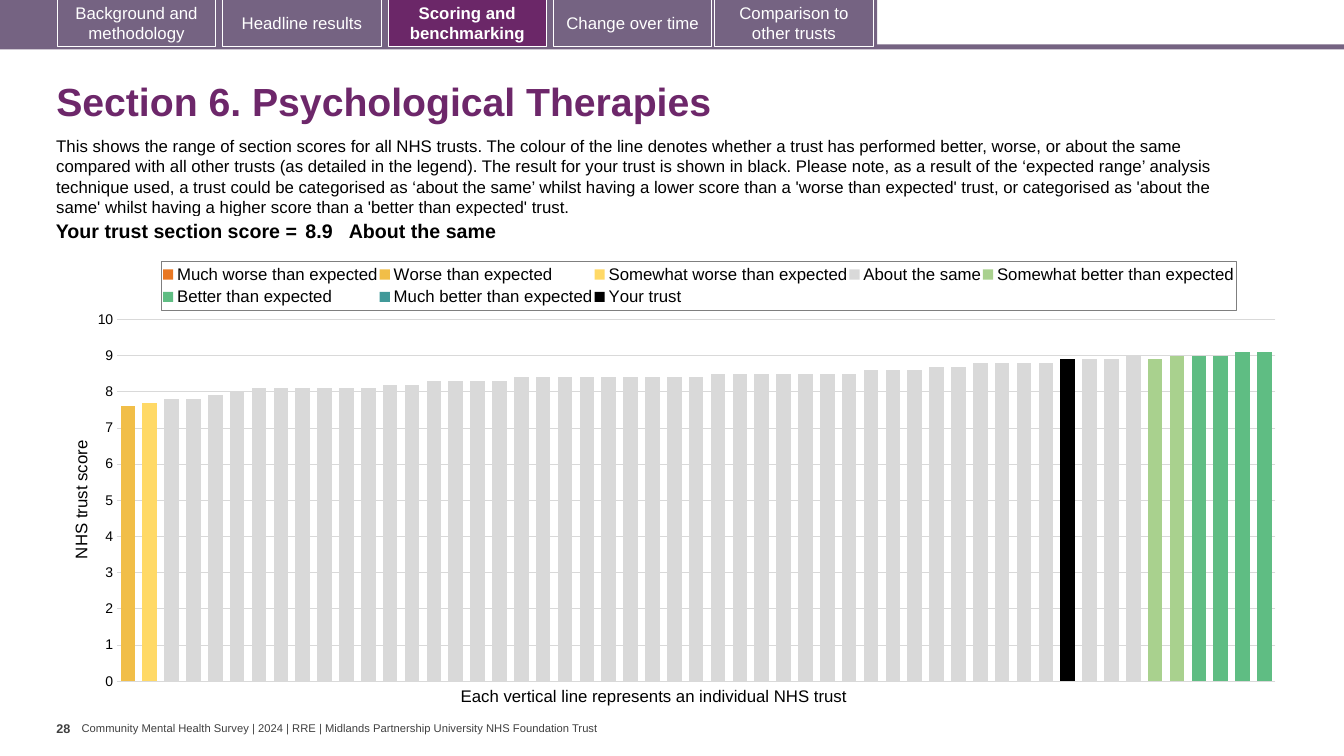
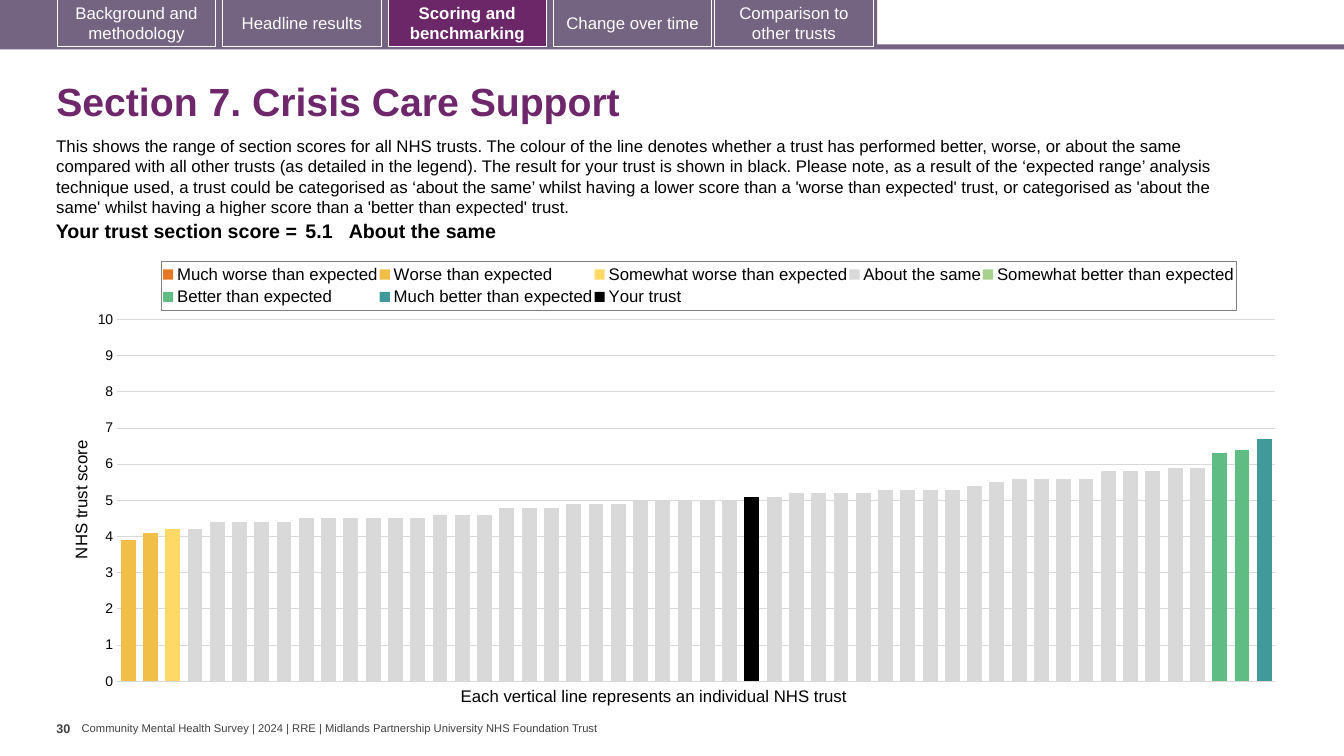
from collections import namedtuple
from copy import deepcopy
from dataclasses import dataclass

from lxml import etree
from pptx import Presentation
from pptx import util as u
from pptx.chart.data import CategoryChartData
from pptx.dml.color import RGBColor
from pptx.enum import chart as charts, shapes, text
from pptx.oxml import parse_xml
from pptx.oxml.ns import nsdecls, qn

PX = 9144
CHART_BOX = (67, 247, 1215, 444)


@dataclass(frozen=True)
class Theme:
    """Colours, font and type sizes shared by all slides."""
    font: str = "Arial"
    band: str = "756382"
    active_tab: str = "6B2768"
    title: str = "6D276A"
    ink: str = "000000"
    muted: str = "404040"
    white: str = "FFFFFF"
    grid: str = "D9D9D9"
    legend_line: str = "7F7F7F"
    title_size: int = 28
    score_size: int = 14
    body_size: int = 12
    axis_size: int = 10
    page_size: int = 9
    footer_size: int = 8


THEME = Theme()
BAND_COLOURS = {
    "Much worse than expected": "E87722",
    "Worse than expected": "F1BE48",
    "Somewhat worse than expected": "FFD966",
    "About the same": "D9D9D9",
    "Somewhat better than expected": "A9D18E",
    "Better than expected": "5FBD83",
    "Much better than expected": "419999",
}
TABS = {
    "Background and methodology": 57,
    "Headline results": 221,
    "Scoring and benchmarking": 385,
    "Change over time": 549,
    "Comparison to other trusts": 709,
}
ACTIVE_TAB = "Scoring and benchmarking"
FOOTER = ("Community Mental Health Survey | 2024 | RRE | "
          "Midlands Partnership University NHS Foundation Trust")
INTRO = (
    "This shows the range of section scores for all NHS trusts. The colour of the line denotes "
    "whether a trust has performed better, worse, or about the same compared with all other trusts "
    "(as detailed in the legend). The result for your trust is shown in black. Please note, as a "
    "result of the ‘expected range’ analysis technique used, a trust could be categorised as ‘about "
    "the same’ whilst having a lower score than a 'worse than expected' trust, or categorised as "
    "'about the same' whilst having a higher score than a 'better than expected' trust."
)
Section = namedtuple("Section", "page title own_rank own_score verdict bands")
SECTIONS = [
    Section("28", "Section 6. Psychological Therapies", 44, 8.9, "About the same", {
        "Worse than expected": [7.6],
        "Somewhat worse than expected": [7.7],
        "About the same": [
            7.8, 7.8, 7.9, 8, 8.1, 8.1, 8.1, 8.1, 8.1, 8.1, 8.2, 8.2, 8.3, 8.3, 8.3, 8.3,
            8.4, 8.4, 8.4, 8.4, 8.4, 8.4, 8.4, 8.4, 8.4, 8.5, 8.5, 8.5, 8.5, 8.5, 8.5, 8.5,
            8.6, 8.6, 8.6, 8.7, 8.7, 8.8, 8.8, 8.8, 8.8, 8.9, 8.9, 8.9, 9],
        "Somewhat better than expected": [8.9, 9],
        "Better than expected": [9, 9, 9.1, 9.1],
    }),
    Section("30", "Section 7. Crisis Care Support", 29, 5.1, "About the same", {
        "Worse than expected": [3.9, 4.1],
        "Somewhat worse than expected": [4.2],
        "About the same": [
            4.2, 4.4, 4.4, 4.4, 4.4, 4.5, 4.5, 4.5, 4.5, 4.5, 4.5, 4.6, 4.6, 4.6, 4.8, 4.8,
            4.8, 4.9, 4.9, 4.9, 5, 5, 5, 5, 5, 5.1, 5.1, 5.2, 5.2, 5.2, 5.2, 5.3, 5.3, 5.3,
            5.3, 5.4, 5.5, 5.6, 5.6, 5.6, 5.6, 5.8, 5.8, 5.8, 5.9, 5.9],
        "Better than expected": [6.3, 6.4],
        "Much better than expected": [6.7],
    }),
]


def px(*lengths):
    """Turn px lengths into EMU."""
    return [u.Emu(length * PX) for length in lengths]


def style_font(font, size, colour, bold=False):
    """Apply the theme font with a size, colour and weight."""
    font.name, font.size, font.bold = THEME.font, u.Pt(size), bold
    font.color.rgb = RGBColor.from_string(colour)


def set_text(frame, words, size, colour, bold=False, align=None):
    """Write one paragraph into a frame and format its runs."""
    frame.text = words
    para = frame.paragraphs[0]
    para.alignment = align
    for span in para.runs:
        style_font(span.font, size, colour, bold)
    return para


def set_margins(holder, horizontal, vertical):
    """Set the inner margins of a text frame or table cell."""
    holder.margin_left, holder.margin_right = px(horizontal, horizontal)
    holder.margin_top, holder.margin_bottom = px(vertical, vertical)


def add_text(page, box, words, size, colour, bold=False, margins=(10, 5),
             wrap=True, anchor=text.MSO_ANCHOR.TOP):
    """Add a text box holding one paragraph."""
    frame = page.shapes.add_textbox(*px(*box)).text_frame
    frame.word_wrap, frame.vertical_anchor = wrap, anchor
    set_margins(frame, *margins)
    return set_text(frame, words, size, colour, bold)


def add_block(page, box, fill):
    """Add a flat rectangle without an outline."""
    block = page.shapes.add_shape(shapes.MSO_SHAPE.RECTANGLE, *px(*box))
    block.shadow.inherit = False
    block.fill.solid()
    block.fill.fore_color.rgb = RGBColor.from_string(fill)
    block.line.fill.background()
    return block


def add_navigation(page):
    """Add the top band with its outlined tabs."""
    add_block(page, (0, 44, 1333, 5), THEME.band)
    add_block(page, (0, 0, 870, 47), THEME.band)
    for label, left in TABS.items():
        active = label == ACTIVE_TAB
        tab = add_block(page, (left, -1, 157, 47), THEME.active_tab if active else THEME.band)
        tab.line.color.rgb = RGBColor.from_string(THEME.white)
        tab.line.width = u.Pt(0.75)
        tab.text_frame.word_wrap = True
        tab.text_frame.vertical_anchor = text.MSO_ANCHOR.MIDDLE
        set_text(tab.text_frame, label, THEME.body_size, THEME.white, active,
                 text.PP_ALIGN.CENTER)


def add_footer(page, number):
    """Add the page number and the survey line."""
    add_text(page, (56, 710, 25, 40), number, THEME.page_size, THEME.muted, True, (0, 5), False)
    add_text(page, (81, 716, 518, 13), FOOTER, THEME.footer_size, THEME.muted,
             margins=(0, 0), wrap=False, anchor=text.MSO_ANCHOR.MIDDLE)


def add_score_table(page, section):
    """Add the one-row table with the trust's score and verdict."""
    table = page.shapes.add_table(1, 3, *px(36, 215, 1169, 31)).table
    table.first_row = table.horz_banding = False
    columns = [
        (263, "Your trust section score =", 4, text.PP_ALIGN.RIGHT),
        (47, str(section.own_score), 4, text.PP_ALIGN.LEFT),
        (859, section.verdict, 0, text.PP_ALIGN.LEFT),
    ]
    for index, (width, words, margin, align) in enumerate(columns):
        table.columns[index].width = px(width)[0]
        cell = table.cell(0, index)
        cell.fill.background()
        set_margins(cell, margin, 4)
        set_text(cell.text_frame, words, THEME.score_size, THEME.ink, True, align)


def build_chart_data(section):
    """Place each band's scores at their ranks, with gaps elsewhere."""
    count = sum(len(scores) for scores in section.bands.values())
    data = CategoryChartData()
    data.categories = [str(rank) for rank in range(1, count + 1)]
    start = 0
    for name in BAND_COLOURS:
        scores = section.bands.get(name, [])
        data.add_series(name, [None] * start + scores + [None] * (count - start - len(scores)))
        start += len(scores)
    before = section.own_rank - 1
    data.add_series("Your trust", [None] * before + [section.own_score]
                    + [None] * (count - before - 1))
    return data


def place_in_chart(element, before, inner=False, **lengths):
    """Give a chart part a manual layout from px lengths within the chart."""
    for stale in element.findall(qn("c:layout")):
        element.remove(stale)
    layout = parse_xml(f"<c:layout {nsdecls('c')}><c:manualLayout/></c:layout>")
    settings = {"layoutTarget": "inner"} if inner else {}
    settings.update(xMode="edge", yMode="edge")
    for key, length in lengths.items():
        settings[key] = length / CHART_BOX[2 if key in "xw" else 3]
    for tag, value in settings.items():
        etree.SubElement(layout[0], qn(f"c:{tag}")).set("val", str(value))
    element.find(qn(before)).addprevious(layout)


def style_legend(chart):
    """Show the boxed legend above the plot."""
    chart.has_legend = True
    legend = chart.legend
    legend.position = charts.XL_LEGEND_POSITION.TOP
    legend.include_in_layout = False
    style_font(legend.font, THEME.body_size, THEME.ink)
    place_in_chart(legend._element, "c:overlay", x=93, y=12, w=1066, h=49)
    legend._element.find(qn("c:overlay")).addnext(parse_xml(
        f'<c:spPr {nsdecls("c", "a")}><a:ln w="9525"><a:solidFill>'
        f'<a:srgbClr val="{THEME.legend_line}"/></a:solidFill></a:ln></c:spPr>'))


def style_axes(chart):
    """Hide the category axis and set up the score axis."""
    chart.category_axis.visible = False
    axis = chart.value_axis
    axis.minimum_scale, axis.maximum_scale, axis.major_unit = 0, 10, 1
    axis.major_tick_mark = charts.XL_TICK_MARK.NONE
    axis.format.line.fill.background()
    style_font(axis.tick_labels.font, THEME.axis_size, THEME.ink)
    grid = axis.major_gridlines.format.line
    grid.color.rgb = RGBColor.from_string(THEME.grid)
    grid.width = u.Pt(0.75)
    frame = axis.axis_title.text_frame
    set_text(frame, "NHS trust score", THEME.body_size, THEME.ink)
    frame._txBody.bodyPr.set("rot", "-5400000")
    place_in_chart(axis.axis_title._element, "c:overlay", x=0, y=187)


def move_own_trust_to_second_axis(area):
    """Plot the last series on a second, unlabelled score axis."""
    bars, category, value = (area.find(qn(f"c:{tag}")) for tag in ("barChart", "catAx", "valAx"))
    own_bars, own_category, own_value = map(deepcopy, (bars, category, value))
    bars.remove(bars.findall(qn("c:ser"))[-1])
    for series in own_bars.findall(qn("c:ser"))[:-1]:
        own_bars.remove(series)
    for axis_id, number in zip(own_bars.findall(qn("c:axId")), ("501", "502")):
        axis_id.set("val", number)
    for axis, number, crossed in ((own_category, "501", "502"), (own_value, "502", "501")):
        axis.find(qn("c:axId")).set("val", number)
        axis.find(qn("c:crossAx")).set("val", crossed)
    for tag in ("c:majorGridlines", "c:title"):
        own_value.remove(own_value.find(qn(tag)))
    for tag, setting in (("axPos", "r"), ("tickLblPos", "none"), ("crosses", "max")):
        own_value.find(qn(f"c:{tag}")).set("val", setting)
    bars.addnext(own_bars)
    value.addnext(own_value)
    own_value.addnext(own_category)


def add_score_chart(page, section):
    """Add the ranked column chart coloured by band."""
    chart = page.shapes.add_chart(charts.XL_CHART_TYPE.COLUMN_CLUSTERED, *px(*CHART_BOX),
                                  build_chart_data(section)).chart
    chart.has_title = False
    style_font(chart.font, THEME.axis_size, THEME.ink)
    plot = chart.plots[0]
    plot.gap_width, plot.overlap, plot.vary_by_categories = 50, 100, False
    for series, colour in zip(plot.series, [*BAND_COLOURS.values(), THEME.ink]):
        series.format.fill.solid()
        series.format.fill.fore_color.rgb = RGBColor.from_string(colour)
    style_legend(chart)
    style_axes(chart)
    area = chart._chartSpace.chart.plotArea
    place_in_chart(area, "c:barChart", inner=True, x=49, y=70, w=1149, h=359)
    move_own_trust_to_second_axis(area)


def add_section_slide(deck, section):
    """Build one section's slide."""
    page = deck.slides.add_slide(deck.slide_layouts[6])
    add_navigation(page)
    heading = add_text(page, (46, 67, 1249, 72), section.title, THEME.title_size,
                       THEME.title, True, anchor=text.MSO_ANCHOR.MIDDLE)
    heading.line_spacing = 0.9
    add_text(page, (46, 130, 1213, 91), INTRO, THEME.body_size, THEME.ink)
    add_score_table(page, section)
    add_score_chart(page, section)
    add_text(page, (447, 675, 411, 30), "Each vertical line represents an individual NHS trust",
             THEME.body_size, THEME.ink, wrap=False)
    add_footer(page, section.page)


def main():
    """Build and save the deck."""
    deck = Presentation()
    deck.slide_width, deck.slide_height = px(1333, 750)
    for section in SECTIONS:
        add_section_slide(deck, section)
    deck.save("out.pptx")


if __name__ == "__main__":
    main()
